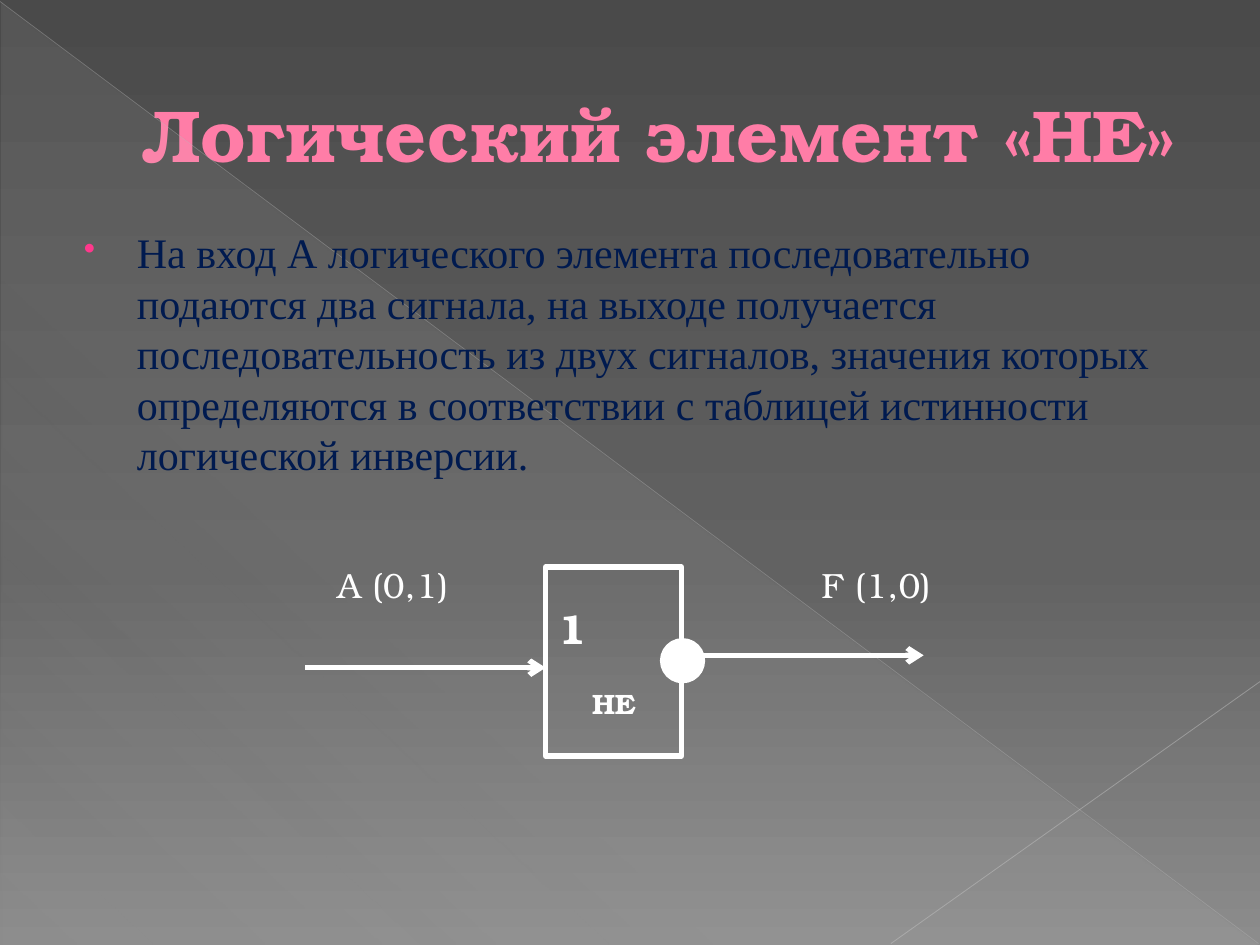
from dataclasses import dataclass
from typing import Optional

from lxml import etree
from pptx import Presentation
from pptx.dml.color import RGBColor
from pptx.enum.shapes import MSO_CONNECTOR, MSO_SHAPE
from pptx.enum.text import MSO_ANCHOR, MSO_AUTO_SIZE, PP_ALIGN
from pptx.oxml.ns import qn
from pptx.util import Cm, Pt

STRAIGHT = MSO_CONNECTOR.STRAIGHT
RIGHT_TRIANGLE = MSO_SHAPE.RIGHT_TRIANGLE
RECTANGLE = MSO_SHAPE.RECTANGLE
NODE = MSO_SHAPE.FLOWCHART_CONNECTOR
MIDDLE, TOP = MSO_ANCHOR.MIDDLE, MSO_ANCHOR.TOP
LEFT, CENTER = PP_ALIGN.LEFT, PP_ALIGN.CENTER

WHITE = RGBColor(0xFF, 0xFF, 0xFF)
PINK = RGBColor(0xFF, 0x7D, 0xA7)
DARK_PINK = RGBColor(0xB1, 0x27, 0x61)
BULLET_PINK = RGBColor(0xFF, 0x38, 0x8C)
NAVY = RGBColor(0x00, 0x1A, 0x4F)
SHADE = RGBColor(0xD2, 0xD2, 0xD2)
DIAGONAL_GRAY = RGBColor(0xBF, 0xBF, 0xBF)
CORNER_GRAY = RGBColor(0xC6, 0xC6, 0xC6)
BACKGROUND_STOPS = (
    (0, RGBColor(0x4A, 0x4A, 0x4A), 100),
    (60, RGBColor(0x62, 0x62, 0x62), 100),
    (100, RGBColor(0x8C, 0x8C, 0x8C), 100),
)
SHADE_STOPS = ((0, SHADE, 10), (70, SHADE, 8), (100, SHADE, 1))

SERIF = "TeX Gyre Bonum"
BODY_FONT = "Times New Roman"
BODY_TEXT = (
    "На вход А логического элемента последовательно подаются два сигнала, "
    "на выходе получается последовательность из двух сигналов, значения "
    "которых определяются в соответствии с таблицей истинности логической "
    "инверсии."
)


@dataclass(frozen=True)
class Line:
    start: tuple[float, float]
    end: tuple[float, float]
    color: RGBColor = WHITE
    width: float = 3
    opacity: int = 100
    arrow: bool = False


@dataclass(frozen=True)
class Label:
    text: str
    left: float
    width: float


BACKDROP_LINES = (
    Line((0, 0.03), (25.37, 19.02), DIAGONAL_GRAY, 0.39, 35),
    Line((25.4, 13.74), (17.96, 19.02), CORNER_GRAY, 0.47, 45),
)
SIGNALS = (
    Line((6.15, 13.46), (11, 13.46), arrow=True),
    Line((13.77, 13.21), (18.62, 13.21), arrow=True),
)
LABELS = (Label("А (0,1)", 6.55, 4.24), Label("F (1,0)", 16.31, 4.01))


def add_element(parent, tag: str, **attributes):
    element = etree.SubElement(parent, qn(tag))
    for name, value in attributes.items():
        element.set(name, str(value))
    return element


def set_alpha(color_element, opacity: int) -> None:
    if opacity < 100:
        add_element(color_element, "a:alpha", val=opacity * 1000)


def set_gradient(fill, owner, stops, angle: int) -> None:
    """Fill with any number of (position, color, opacity) stops, angle clockwise."""
    fill.gradient()
    gradient = owner.find(".//" + qn("a:gradFill"))
    for child in list(gradient):
        gradient.remove(child)
    stop_list = add_element(gradient, "a:gsLst")
    for position, color, opacity in stops:
        stop = add_element(stop_list, "a:gs", pos=position * 1000)
        set_alpha(add_element(stop, "a:srgbClr", val=color), opacity)
    add_element(gradient, "a:lin", ang=angle * 60000, scaled=0)


def place(shape, *box: float) -> None:
    for name, value in zip(("left", "top", "width", "height"), box):
        setattr(shape, name, Cm(value))


def set_frame(text_frame, **values) -> None:
    for name, value in {"word_wrap": True, **values}.items():
        setattr(text_frame, name, value)


def write(paragraph, text: str, color: RGBColor, alignment=LEFT, **font_values):
    run = paragraph.add_run()
    run.text = text
    paragraph.alignment = alignment
    for name, value in font_values.items():
        setattr(run.font, name, value)
    run.font.color.rgb = color
    return run


def add_line(slide, line: Line) -> None:
    points = [Cm(value) for value in line.start + line.end]
    connector = slide.shapes.add_connector(STRAIGHT, *points)
    connector.line.width = Pt(line.width)
    connector.line.color.rgb = line.color
    properties = connector._element.spPr
    set_alpha(properties.find(".//" + qn("a:srgbClr")), line.opacity)
    if line.arrow:
        add_element(properties.find(qn("a:ln")), "a:tailEnd", type="arrow")
    add_element(properties, "a:effectLst")


def add_plain_shape(slide, kind, box, fill: Optional[RGBColor] = None,
                    line_width: float = 0):
    shape = slide.shapes.add_shape(kind, *[Cm(value) for value in box])
    shape.shadow.inherit = False
    if fill is None:
        shape.fill.background()
    else:
        shape.fill.solid()
        shape.fill.fore_color.rgb = fill
    if line_width:
        shape.line.color.rgb = WHITE
        shape.line.width = Pt(line_width)
    else:
        shape.line.fill.background()
    return shape


def add_backdrop(slide) -> None:
    set_gradient(slide.background.fill, slide.element, BACKGROUND_STOPS, 90)
    triangle = add_plain_shape(slide, RIGHT_TRIANGLE, (0.03, 0.05, 25.35, 19))
    set_gradient(triangle.fill, triangle._element, SHADE_STOPS, 133)
    for line in BACKDROP_LINES:
        add_line(slide, line)


def format_title(title) -> None:
    place(title, 1.27, 0.74, 22.86, 3.89)
    set_frame(title.text_frame, vertical_anchor=MIDDLE,
              auto_size=MSO_AUTO_SIZE.NONE)
    paragraph = title.text_frame.paragraphs[0]
    run = write(paragraph, "Логический элемент «НЕ»", PINK,
                name=SERIF, size=Pt(42), bold=True)
    paragraph._p.get_or_add_pPr().set("marL", str(Cm(1.35)))
    outline = etree.Element(qn("a:ln"), w=str(Pt(0.5)))
    add_element(add_element(outline, "a:solidFill"), "a:srgbClr", val=DARK_PINK)
    run._r.get_or_add_rPr().insert(0, outline)


def add_text_box(slide, *box: float):
    text_box = slide.shapes.add_textbox(*[Cm(value) for value in box])
    set_frame(text_box.text_frame, vertical_anchor=TOP)
    return text_box.text_frame


def add_body(slide) -> None:
    paragraph = add_text_box(slide, 1.27, 4.45, 22.86, 4.01).paragraphs[0]
    write(paragraph, BODY_TEXT, NAVY, name=BODY_FONT, size=Pt(24))
    paragraph.space_before = Pt(4.8)
    properties = paragraph._p.get_or_add_pPr()
    properties.set("marL", str(Cm(1.24)))
    properties.set("indent", str(Cm(-1.07)))
    bullet_color = add_element(properties, "a:buClr")
    add_element(bullet_color, "a:srgbClr", val=BULLET_PINK)
    add_element(properties, "a:buSzPct", val=80000)
    add_element(properties, "a:buChar", char="•")


def add_gate(slide) -> None:
    gate = add_plain_shape(slide, RECTANGLE, (11, 11.43, 2.74, 3.81), line_width=3)
    set_frame(gate.text_frame, vertical_anchor=MIDDLE)
    write(gate.text_frame.paragraphs[0], "1", WHITE,
          name=SERIF, size=Pt(24), bold=True)
    name_paragraph = gate.text_frame.add_paragraph()
    write(name_paragraph, "НЕ", WHITE, CENTER, name=SERIF, size=Pt(16), bold=True)
    name_paragraph.space_before = Pt(19)
    for signal in SIGNALS:
        add_line(slide, signal)
    for label in LABELS:
        text_frame = add_text_box(slide, label.left, 11.23, label.width, 1.12)
        text_frame.auto_size = MSO_AUTO_SIZE.SHAPE_TO_FIT_TEXT
        write(text_frame.paragraphs[0], label.text, WHITE, name=SERIF, size=Pt(20))
    add_plain_shape(slide, NODE, (13.34, 12.9, 0.84, 0.84), WHITE, 2)


def main() -> None:
    presentation = Presentation()
    presentation.slide_width, presentation.slide_height = Cm(25.4), Cm(19.05)
    slide = presentation.slides.add_slide(presentation.slide_layouts[5])
    add_backdrop(slide)
    format_title(slide.shapes.title)
    add_body(slide)
    add_gate(slide)
    presentation.save("out.pptx")


if __name__ == "__main__":
    main()
